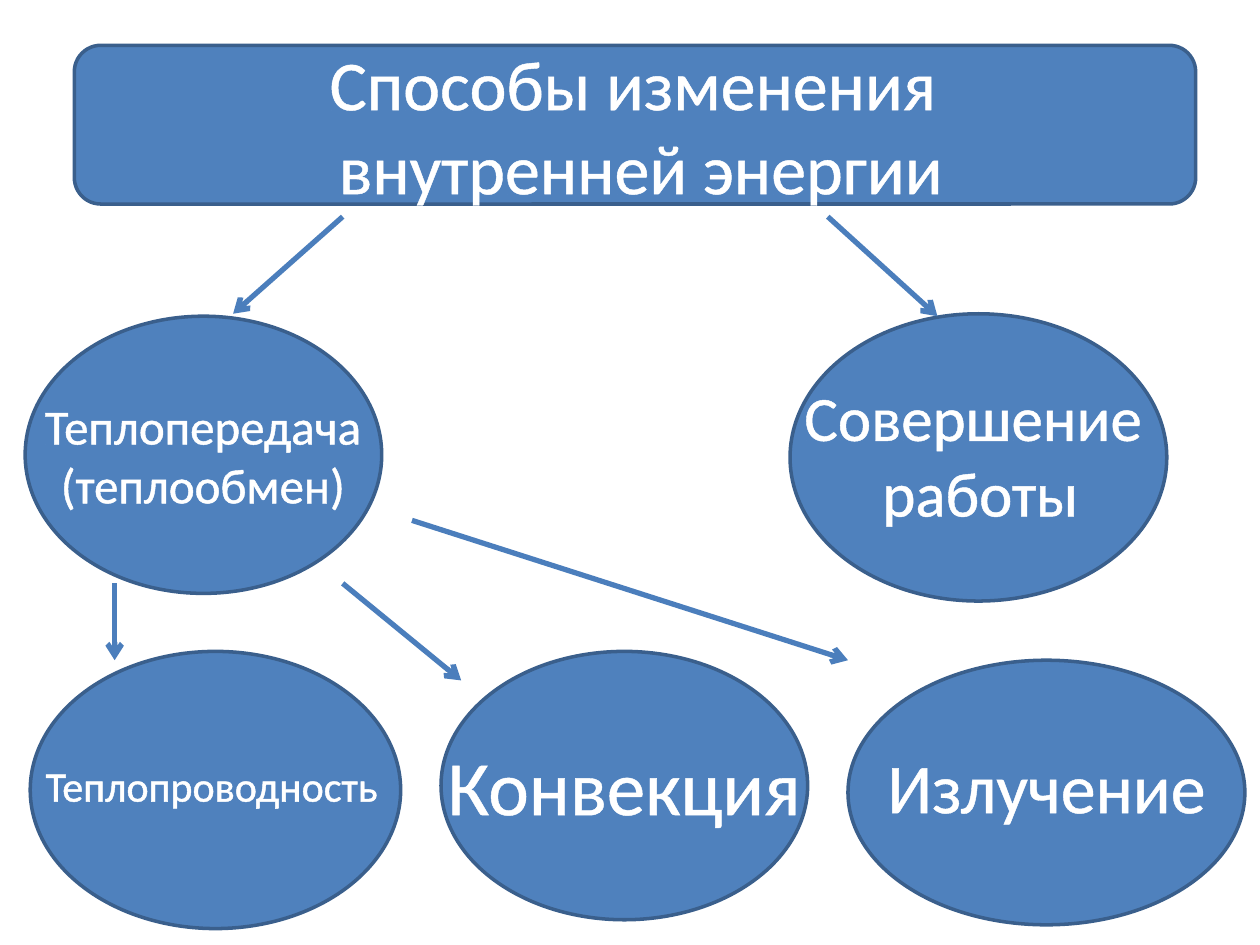
from typing import NamedTuple

from lxml import etree
from pptx import Presentation
from pptx import util as u
from pptx.dml.color import RGBColor
from pptx.enum import shapes, text
from pptx.oxml import parse_xml
from pptx.oxml.ns import nsdecls, qn

SLIDE_W, SLIDE_H = u.Inches(10), u.Inches(7.5)
COL, ROW = SLIDE_W / 10, SLIDE_H / 7.5

BLUE = RGBColor(0x4F, 0x81, 0xBD)
BORDER = RGBColor(0x3A, 0x5F, 0x8C)
ARROW = RGBColor(0x4B, 0x7E, 0xBC)
WHITE = RGBColor(0xFF, 0xFF, 0xFF)

ROUNDED = shapes.MSO_SHAPE.ROUNDED_RECTANGLE
OVAL = shapes.MSO_SHAPE.OVAL


class Box(NamedTuple):
    """Left, top, width and height in grid columns and rows."""
    left: float
    top: float
    width: float
    height: float

    def emu(self) -> list[int]:
        return [round(n * unit) for n, unit in zip(self, (COL, ROW, COL, ROW))]


class Node(NamedTuple):
    preset: shapes.MSO_SHAPE
    box: Box
    label_box: Box
    lines: tuple[str, ...]
    size: int


class Arrow(NamedTuple):
    x1: float
    y1: float
    x2: float
    y2: float


NODES = [
    Node(ROUNDED, Box(0.59, 0.36, 8.9, 1.26), Box(2.49, 0.27, 5.19, 1.45),
         ("Способы изменения ", "внутренней энергии"), 40),
    Node(OVAL, Box(0.2, 2.51, 2.83, 2.2), Box(0.24, 3.09, 2.74, 1.04),
         ("Теплопередача", "(теплообмен)"), 28),
    Node(OVAL, Box(6.27, 2.49, 2.99, 2.28), Box(6.27, 2.95, 3.02, 1.31),
         ("Совершение ", "работы"), 36),
    Node(OVAL, Box(0.24, 5.17, 2.94, 2.2), Box(0.25, 5.98, 2.86, 0.5),
         ("Теплопроводность",), 24),
    Node(OVAL, Box(3.5, 5.17, 2.91, 2.13), Box(3.44, 5.81, 3.03, 0.84),
         ("Конвекция",), 44),
    Node(OVAL, Box(6.73, 5.24, 3.15, 2.1), Box(6.93, 5.85, 2.75, 0.77),
         ("Излучение",), 40),
]

ARROWS = [
    Arrow(2.72, 1.72, 1.85, 2.49),
    Arrow(6.57, 1.72, 7.44, 2.51),
    Arrow(0.91, 4.63, 0.91, 5.24),
    Arrow(2.72, 4.63, 3.66, 5.4),
    Arrow(3.27, 4.13, 6.73, 5.24),
]


def outline_run(r) -> None:
    """Give the letters of a run a thin white contour."""
    ln = parse_xml(f'<a:ln {nsdecls("a")} w="{u.Pt(1.45)}"><a:solidFill>'
                   f'<a:srgbClr val="{WHITE}"/></a:solidFill></a:ln>')
    r.font._element.insert(0, ln) if hasattr(r.font, "_element") else \
        r._r.get_or_add_rPr().insert(0, ln)


def draw_node(s, node: Node) -> None:
    sp = s.shapes.add_shape(node.preset, *node.box.emu())
    sp.shadow.inherit = False
    sp.fill.solid()
    sp.fill.fore_color.rgb = BLUE
    sp.line.color.rgb = BORDER
    sp.line.width = u.Pt(2)

    tf = s.shapes.add_textbox(*node.label_box.emu()).text_frame
    tf.word_wrap = False
    tf.auto_size = text.MSO_AUTO_SIZE.SHAPE_TO_FIT_TEXT
    tf.text = "\n".join(node.lines)
    for p in tf.paragraphs:
        p.alignment = text.PP_ALIGN.CENTER
        p.font.name = "Calibri"
        p.font.size = u.Pt(node.size)
        p.font.color.rgb = WHITE
        for r in p.runs:
            outline_run(r)


def draw_arrow(s, arrow: Arrow) -> None:
    ends = [round(n * unit) for n, unit in zip(arrow, (COL, ROW, COL, ROW))]
    cx = s.shapes.add_connector(shapes.MSO_CONNECTOR.STRAIGHT, *ends)
    cx.line.color.rgb = ARROW
    cx.line.width = u.Pt(3)
    etree.SubElement(cx.line._get_or_add_ln(), qn("a:tailEnd"), type="arrow")
    etree.SubElement(cx._element.spPr, qn("a:effectLst"))


def main() -> None:
    prs = Presentation()
    prs.slide_width, prs.slide_height = SLIDE_W, SLIDE_H
    s = prs.slides.add_slide(prs.slide_layouts[6])
    for node in NODES:
        draw_node(s, node)
    for arrow in ARROWS:
        draw_arrow(s, arrow)
    prs.save("out.pptx")


if __name__ == "__main__":
    main()
